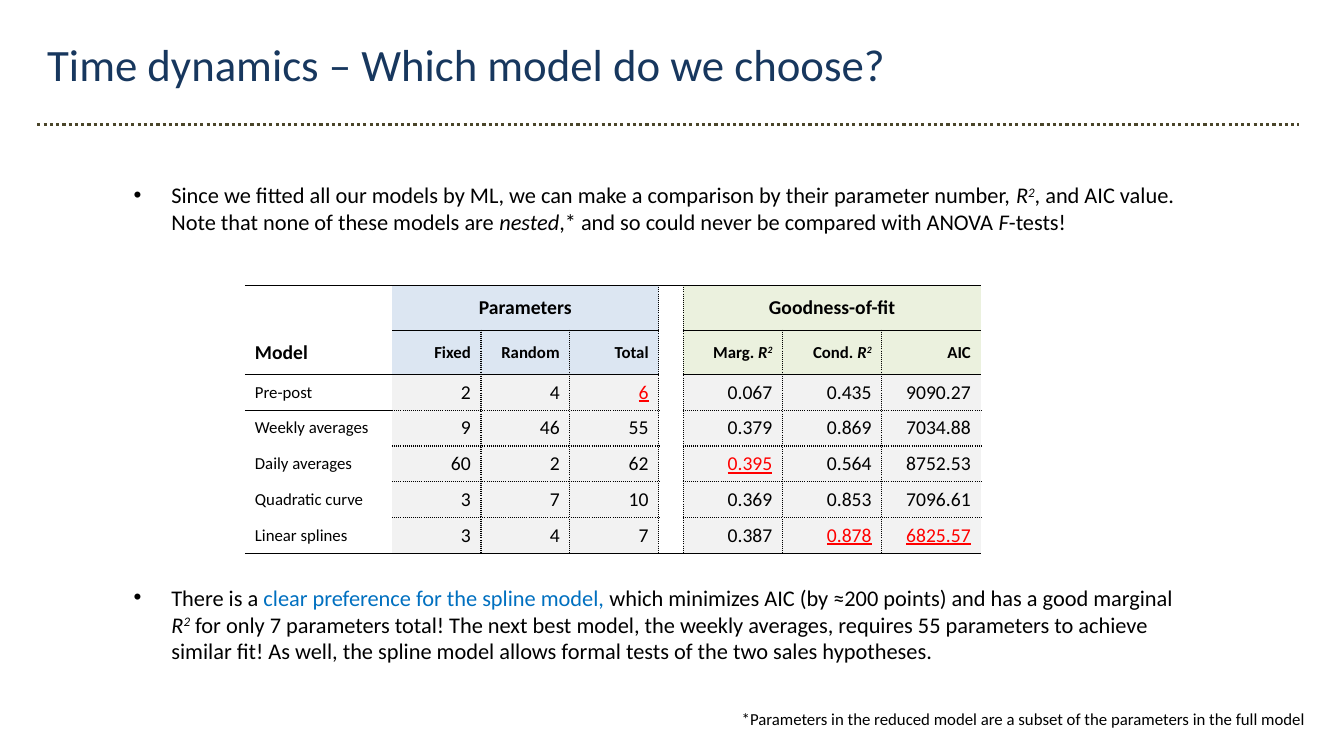
from lxml import etree
from pptx import Presentation, util as u
from pptx.dml.color import RGBColor
from pptx.enum import dml, shapes, text
from pptx.oxml.ns import qn

FONT = "Calibri"
BLACK, RED, BLUE = "000000", "FF0000", "0070C0"
NAVY, BROWN = "17375E", "4A452A"
PARAMETERS_FILL, FIT_FILL, VALUE_FILL = "DCE6F2", "EBF1DE", "F2F2F2"
NO_GRID_STYLE = "{2D5ABB26-0587-4C30-8999-92F81FD0307C}"
GAP_COLUMN = 4
COLUMN_WIDTHS = [3.71] + [2.24] * 3 + [0.62] + [2.5] * 3
ROW_HEIGHTS = [1.12] * 2 + [0.9] * 5
RIGHT = text.PP_ALIGN.RIGHT
R_SQUARED = [("R", {"italic": True}), ("2", {"italic": True, "superscript": True})]
HEADINGS = [
    [("Fixed", {})], [("Random", {})], [("Total", {})], [],
    [("Marg. ", {}), *R_SQUARED], [("Cond. ", {}), *R_SQUARED], [("AIC", {})],
]
MODELS = [
    ("Pre-post", "2", "4", "6", "", "0.067", "0.435", "9090.27"),
    ("Weekly averages", "9", "46", "55", "", "0.379", "0.869", "7034.88"),
    ("Daily averages", "60", "2", "62", "", "0.395", "0.564", "8752.53"),
    ("Quadratic curve", "3", "7", "10", "", "0.369", "0.853", "7096.61"),
    ("Linear splines", "3", "4", "7", "", "0.387", "0.878", "6825.57"),
]
BEST_VALUES = {"6", "0.395", "0.878", "6825.57"}
COMPARISON = [
    ("Since we fitted all our models by ML, we can make a comparison by their parameter number, ", {}),
    *R_SQUARED,
    (", and AIC value. Note that none of these models are ", {}),
    ("nested", {"italic": True}),
    (",* and so could never be compared with ANOVA ", {}),
    ("F", {"italic": True}),
    ("-tests!", {}),
]
PREFERENCE = [
    ("There is a ", {}),
    ("clear preference for the spline model, ", {"color": BLUE}),
    ("which minimizes AIC (by ≈200 points) and has a good marginal ", {}),
    *R_SQUARED,
    (" for only 7 parameters total! The next best model, the weekly averages, requires 55 "
     "parameters to achieve similar fit! As well, the spline model allows formal tests of "
     "the two sales hypotheses.", {}),
]


def rgb(color):
    """Turn a hex string into a colour."""
    return RGBColor.from_string(color)


def add_run(paragraph, words, size, color=BLACK, bold=False, italic=False,
            underline=False, superscript=False):
    """Add one formatted run to a paragraph."""
    run = paragraph.add_run()
    run.text = words
    font = run.font
    font.name, font.size, font.color.rgb = FONT, u.Pt(size), rgb(color)
    font.bold, font.italic, font.underline = bold, italic, underline
    if superscript:
        run._r.get_or_add_rPr().set("baseline", "30000")


def add_runs(paragraph, runs, size, **style):
    """Add runs that share a size and a base style."""
    for words, changes in runs:
        add_run(paragraph, words, size, **{**style, **changes})


def add_text_frame(slide, left, top, width, height):
    """Add a wrapping text box and return its text frame."""
    box = slide.shapes.add_textbox(u.Cm(left), u.Cm(top), u.Cm(width), u.Cm(height))
    box.text_frame.word_wrap = True
    return box.text_frame


def add_bullet(paragraph, runs, space_before):
    """Fill a paragraph as a bullet with a hanging indent."""
    paragraph.space_before = u.Pt(space_before)
    properties = paragraph._p.get_or_add_pPr()
    properties.set("marL", str(u.Cm(0.95)))
    properties.set("indent", str(-u.Cm(0.95)))
    etree.SubElement(properties, qn("a:buFont")).set("typeface", "Arial")
    etree.SubElement(properties, qn("a:buChar")).set("char", "•")
    add_runs(paragraph, runs, 16)


def add_divider(slide, left, right, y):
    """Draw the dotted line under the title."""
    line = slide.shapes.add_connector(
        shapes.MSO_CONNECTOR.STRAIGHT, u.Cm(left), u.Cm(y), u.Cm(right), u.Cm(y))
    line.line.color.rgb = rgb(BROWN)
    line.line.width = u.Pt(2.25)
    line.line.dash_style = dml.MSO_LINE.ROUND_DOT
    etree.SubElement(line._element.spPr, qn("a:effectLst"))


def horizontal_rule(edge, column):
    """Give the dash of the rule above row number edge, or None."""
    if edge in (0, len(ROW_HEIGHTS)):
        return "solid"
    if column == GAP_COLUMN:
        return None
    if column == 0:
        return "solid" if edge in (2, 3) else None
    return "solid" if edge <= 2 else "sysDot"


def vertical_rule(edge, row):
    """Give the dash of the rule left of column number edge, or None."""
    if edge in (GAP_COLUMN, GAP_COLUMN + 1):
        return "sysDot"
    return "sysDot" if row > 0 and 1 < edge < len(COLUMN_WIDTHS) else None


def set_borders(cell, row, column):
    """Set the four borders of a cell, which come before its fill."""
    properties = cell._tc.get_or_add_tcPr()
    dashes = {
        "a:lnL": vertical_rule(column, row), "a:lnR": vertical_rule(column + 1, row),
        "a:lnT": horizontal_rule(row, column), "a:lnB": horizontal_rule(row + 1, column),
    }
    for position, (tag, dash) in enumerate(dashes.items()):
        border = etree.Element(qn(tag), w=str(u.Pt(1)))
        properties.insert(position, border)
        if dash is None:
            etree.SubElement(border, qn("a:noFill"))
            continue
        fill = etree.SubElement(border, qn("a:solidFill"))
        etree.SubElement(fill, qn("a:srgbClr")).set("val", BLACK)
        etree.SubElement(border, qn("a:prstDash")).set("val", dash)


def format_cell(cell, row, column):
    """Set the fill, margins, anchor and borders of a cell."""
    if column in (0, GAP_COLUMN):
        cell.fill.background()
    else:
        heading_fill = PARAMETERS_FILL if column < GAP_COLUMN else FIT_FILL
        cell.fill.solid()
        cell.fill.fore_color.rgb = rgb(heading_fill if row < 2 else VALUE_FILL)
    cell.margin_top = cell.margin_bottom = 0
    cell.vertical_anchor = text.MSO_ANCHOR.MIDDLE
    set_borders(cell, row, column)


def write_cell(cell, runs, size, alignment=RIGHT, **style):
    """Write aligned runs into a cell."""
    paragraph = cell.text_frame.paragraphs[0]
    paragraph.alignment = alignment
    add_runs(paragraph, runs, size, **style)


def add_model_table(slide, left, top):
    """Add the table that compares the models."""
    frame = slide.shapes.add_table(
        len(ROW_HEIGHTS), len(COLUMN_WIDTHS), u.Cm(left), u.Cm(top),
        u.Cm(sum(COLUMN_WIDTHS)), u.Cm(sum(ROW_HEIGHTS)))
    table = frame.table
    table.first_row = table.horz_banding = False
    table._tbl.tblPr.find(qn("a:tableStyleId")).text = NO_GRID_STYLE
    for column, width in enumerate(COLUMN_WIDTHS):
        table.columns[column].width = u.Cm(width)
    for row, height in enumerate(ROW_HEIGHTS):
        table.rows[row].height = u.Cm(height)
        for column in range(len(COLUMN_WIDTHS)):
            format_cell(table.cell(row, column), row, column)

    for column, group in ((1, "Parameters"), (GAP_COLUMN + 1, "Goodness-of-fit")):
        table.cell(0, column).merge(table.cell(0, column + 2))
        write_cell(table.cell(0, column), [(group, {})], 14, text.PP_ALIGN.CENTER, bold=True)
    write_cell(table.cell(1, 0), [("Model", {})], 14, text.PP_ALIGN.LEFT, bold=True)
    for column, runs in enumerate(HEADINGS, 1):
        write_cell(table.cell(1, column), runs, 12, bold=True)
    for row, (model, *values) in enumerate(MODELS, 2):
        write_cell(table.cell(row, 0), [(model, {})], 12, text.PP_ALIGN.LEFT)
        for column, value in enumerate(values, 1):
            best = value in BEST_VALUES
            if value:
                write_cell(table.cell(row, column), [(value, {})], 14,
                           color=RED if best else BLACK, underline=best)


def main():
    """Build the slide and save it."""
    presentation = Presentation()
    presentation.slide_width, presentation.slide_height = u.Cm(33.87), u.Cm(19.05)
    slide = presentation.slides.add_slide(presentation.slide_layouts[6])
    body = add_text_frame(slide, 3.12, 4.45, 27.2, 13.69)
    add_bullet(body.paragraphs[0], COMPARISON, 0)
    add_bullet(body.add_paragraph(), PREFERENCE, 249)
    title = add_text_frame(slide, 0.94, 0.81, 29.59, 1.63)
    add_run(title.paragraphs[0], "Time dynamics – Which model do we choose?", 32, NAVY)
    add_divider(slide, 0.94, 32.74, 3.13)
    add_model_table(slide, 6.17, 7.2)
    footnote = add_text_frame(slide, 15.34, 17.73, 17.81, 0.77).paragraphs[0]
    footnote.alignment = RIGHT
    add_run(footnote, "*Parameters in the reduced model are a subset of the parameters in the full model", 12)
    presentation.save("out.pptx")


if __name__ == "__main__":
    main()
